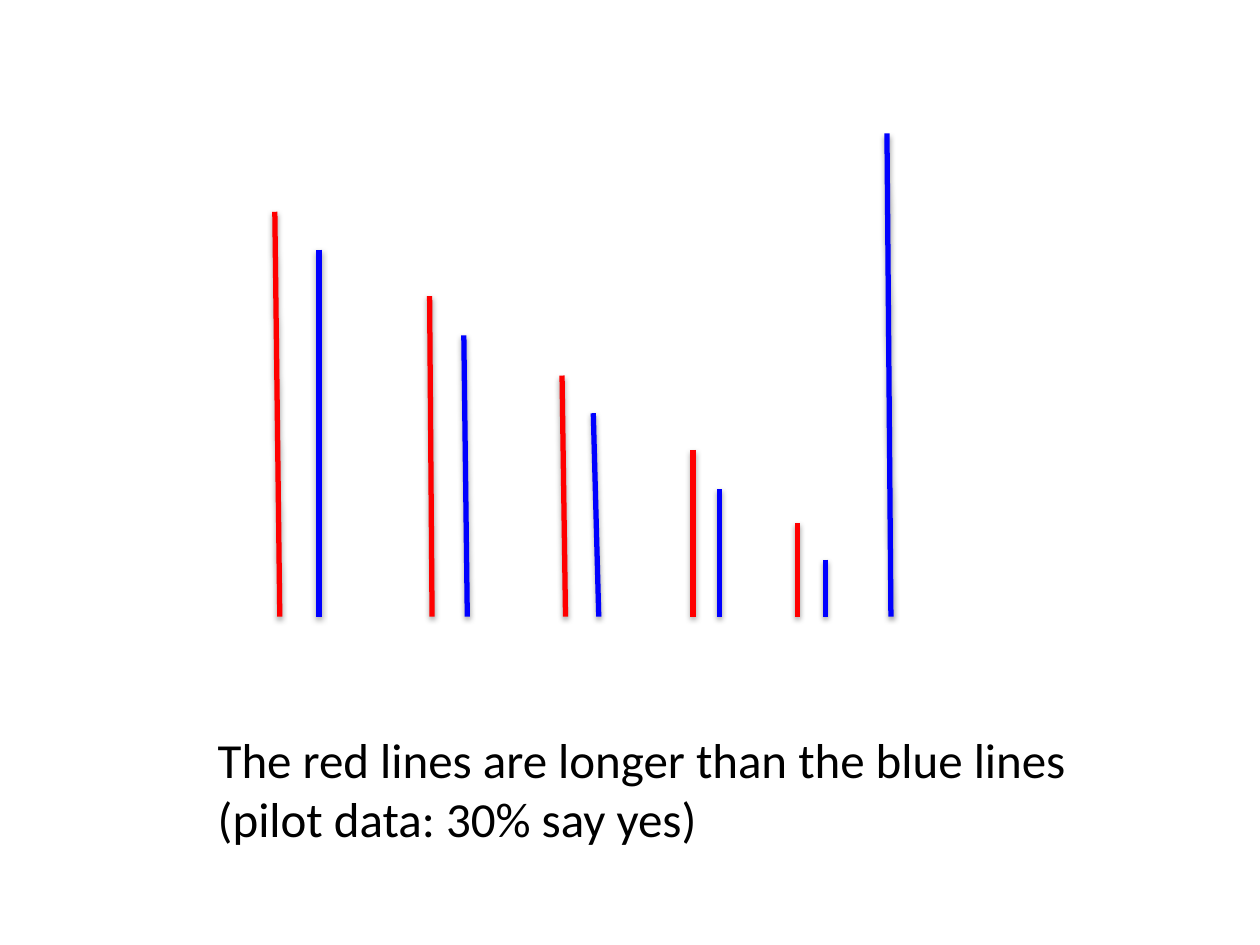
from dataclasses import dataclass

from pptx import Presentation
from pptx.dml.color import RGBColor
from pptx.enum.shapes import MSO_CONNECTOR
from pptx.enum.text import MSO_AUTO_SIZE
from pptx.util import Cm, Pt

STRAIGHT = MSO_CONNECTOR.STRAIGHT
GROW = MSO_AUTO_SIZE.SHAPE_TO_FIT_TEXT
BLANK = 6


@dataclass(frozen=True)
class Theme:
    red: RGBColor = RGBColor(0xFF, 0x00, 0x00)
    blue: RGBColor = RGBColor(0x00, 0x00, 0xFF)
    text: RGBColor = RGBColor(0x00, 0x00, 0x00)
    font: str = "Calibri"
    size: int = 28
    line: int = 3


class Builder:
    def __init__(self, prs, theme):
        self.theme = theme
        self.s = prs.slides.add_slide(prs.slide_layouts[BLANK])

    def line(self, x1, y1, x2, y2, color):
        sp = self.s.shapes.add_connector(STRAIGHT, Cm(x1), Cm(y1), Cm(x2), Cm(y2))
        sp.line.color.rgb = color
        sp.line.width = Pt(self.theme.line)

    def text(self, left, top, width, height, words):
        sp = self.s.shapes.add_textbox(Cm(left), Cm(top), Cm(width), Cm(height))
        tf = sp.text_frame
        tf.word_wrap = True
        tf.auto_size = GROW
        r = tf.paragraphs[0].add_run()
        r.text = words
        r.font.name = self.theme.font
        r.font.size = Pt(self.theme.size)
        r.font.color.rgb = self.theme.text


BASELINE = 12.43

# Each line: top x, top y, bottom x
RED_LINES = [
    (5.54, 4.27, 5.64),
    (8.66, 5.97, 8.71),
    (11.33, 7.57, 11.4),
    (13.97, 9.07, 13.97),
    (16.08, 10.54, 16.08),
]
BLUE_LINES = [
    (6.43, 5.03, 6.43),
    (9.35, 6.76, 9.42),
    (11.96, 8.33, 12.07),
    (14.5, 9.86, 14.5),
    (16.64, 11.28, 16.64),
    (17.88, 2.69, 17.96),
]


def main():
    prs = Presentation()
    prs.slide_width, prs.slide_height = Cm(25.4), Cm(19.05)
    theme = Theme()
    b = Builder(prs, theme)
    for lines, color in ((RED_LINES, theme.red), (BLUE_LINES, theme.blue)):
        for top_x, top_y, bottom_x in lines:
            b.line(top_x, top_y, bottom_x, BASELINE, color)
    b.text(4.14, 14.58, 18.87, 2.64,
           "The red lines are longer than the blue lines (pilot data: 30% say yes)")
    prs.save("out.pptx")


if __name__ == "__main__":
    main()
